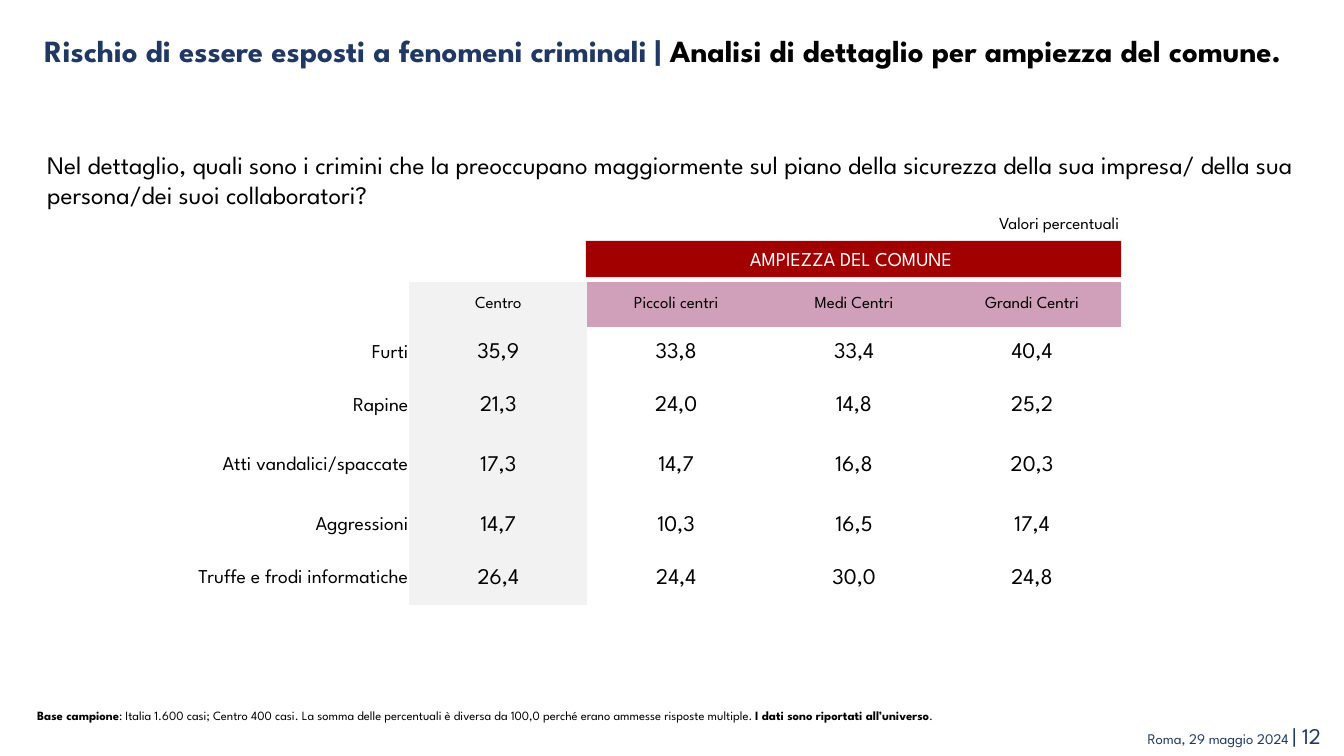
from pptx import Presentation
from pptx.dml.color import RGBColor
from pptx.enum.shapes import MSO_SHAPE
from pptx.enum.text import MSO_ANCHOR, PP_ALIGN
from pptx.util import Inches, Pt

FONT = "League Spartan"
COLORS = {
    "navy": "203864", "black": "000000", "white": "FFFFFF",
    "red": "A20000", "gray": "F2F2F2", "pink": "D0A0BA",
}
WIDTH, HEIGHT = Inches(13.33), Inches(7.5)
PLAIN_TABLE_STYLE = "{2D5ABB26-0587-4C30-8999-92F81FD0307C}"

HEADERS = ["", "Centro", "Piccoli centri", "Medi Centri", "Grandi Centri"]
CRIMES = [
    ["Furti", "35,9", "33,8", "33,4", "40,4"],
    ["Rapine", "21,3", "24,0", "14,8", "25,2"],
    ["Atti vandalici/spaccate", "17,3", "14,7", "16,8", "20,3"],
    ["Aggressioni", "14,7", "10,3", "16,5", "17,4"],
    ["Truffe e frodi informatiche", "26,4", "24,4", "30,0", "24,8"],
]


def across(percent):
    """Share of the slide's width."""
    return round(WIDTH * percent / 100)


def down(percent):
    """Share of the slide's height."""
    return round(HEIGHT * percent / 100)


def area(left, top, width, height):
    return across(left), down(top), across(width), down(height)


def color(name):
    return RGBColor.from_string(COLORS[name])


def write(frame, runs, align=PP_ALIGN.LEFT):
    """Fill a frame with one paragraph of (text, size, colour, bold) runs."""
    frame.word_wrap = True
    paragraph = frame.paragraphs[0]
    paragraph.alignment = align
    for text, size, tint, bold in runs:
        run = paragraph.add_run()
        run.text = text
        run.font.name = FONT
        run.font.size = Pt(size)
        run.font.bold = bold
        run.font.color.rgb = color(tint)
    return paragraph


def add_title(slide, place, runs):
    title = slide.shapes.title
    title.left, title.top, title.width, title.height = place
    frame = title.text_frame
    frame.vertical_anchor = MSO_ANCHOR.TOP
    frame.margin_left = frame.margin_right = Inches(0.07)
    frame.margin_top = frame.margin_bottom = Inches(0.04)
    write(frame, runs)


def add_text(slide, place, runs, align=PP_ALIGN.LEFT):
    return write(slide.shapes.add_textbox(*place).text_frame, runs, align)


def add_band(slide, place, text):
    band = slide.shapes.add_shape(MSO_SHAPE.RECTANGLE, *place)
    band.shadow.inherit = False
    band.fill.solid()
    band.fill.fore_color.rgb = color("red")
    band.line.fill.background()
    band.text_frame.vertical_anchor = MSO_ANCHOR.MIDDLE
    write(band.text_frame, [(text, 14, "white", False)], PP_ALIGN.CENTER)


def cell_fill(row, column):
    if column == 1:
        return "gray"
    if row == 0 and column > 1:
        return "pink"
    return "white"


def write_cell(cell, text, row, column):
    cell.fill.solid()
    cell.fill.fore_color.rgb = color(cell_fill(row, column))
    cell.vertical_anchor = MSO_ANCHOR.MIDDLE
    cell.margin_left = cell.margin_right = cell.margin_top = Inches(0.01)
    cell.margin_bottom = 0
    size = 12 if row == 0 else 14 if column == 0 else 16
    paragraph = cell.text_frame.paragraphs[0]
    paragraph.text = text
    paragraph.alignment = PP_ALIGN.RIGHT if column == 0 else PP_ALIGN.CENTER
    paragraph.font.size = Pt(size)
    for run in paragraph.runs:
        run.font.name = FONT
        run.font.size = Pt(size)
        run.font.color.rgb = color("black")


def add_crime_table(slide, left, top, widths, heights):
    place = area(left, top, sum(widths), sum(heights))
    frame = slide.shapes.add_table(len(heights), len(widths), *place)
    table = frame.table
    table.horz_banding = False
    table.first_row = False
    # Table style without borders
    table._tbl.tblPr.find("{*}tableStyleId").text = PLAIN_TABLE_STYLE
    for column, width in zip(table.columns, widths):
        column.width = across(width)
    for row, height in zip(table.rows, heights):
        row.height = down(height)
    for r, values in enumerate([HEADERS] + CRIMES):
        for c, text in enumerate(values):
            write_cell(table.cell(r, c), text, r, c)


def main():
    prs = Presentation()
    prs.slide_width, prs.slide_height = WIDTH, HEIGHT
    slide = prs.slides.add_slide(prs.slide_layouts[5])

    # Footer with date and page
    add_text(slide, area(47.04, 94.8, 51.99, 4.93), [
        ("Roma, 29 maggio 2024 ", 10.5, "navy", False),
        ("| 12", 16, "navy", False),
    ], PP_ALIGN.RIGHT)

    # Title and survey question
    add_title(slide, area(2.78, 3.6, 96.85, 10.93), [
        ("Rischio di essere esposti a fenomeni criminali |", 22, "navy", True),
        (" Analisi di dettaglio per ampiezza del comune.", 22, "black", True),
    ])
    add_text(slide, area(2.78, 19.07, 95.05, 9.47), [
        ("Nel dettaglio, quali sono i crimini che la preoccupano maggiormente "
         "sul piano della sicurezza della sua impresa/ della sua "
         "persona/dei suoi collaboratori?", 18, "black", False),
    ])

    # Results by town size
    add_band(slide, area(43.59, 31.87, 39.83, 4.8), "AMPIEZZA DEL COMUNE ")
    add_crime_table(slide, 3.98, 37.33, [26.48] + [13.24] * 4,
                    [5.87, 7, 7, 8.8, 7, 7])
    add_text(slide, area(67.89, 27.47, 16.13, 4),
             [("Valori percentuali", 12, "black", False)], PP_ALIGN.RIGHT)

    # Sample note
    note = add_text(slide, area(2.03, 92.8, 94.15, 3.33), [
        ("Base campione", 9, "black", True),
        (": Italia 1.600 casi; Centro 400 casi. La somma delle percentuali è "
         "diversa da 100,0 perché erano ammesse risposte multiple. ",
         9, "black", False),
        ("I dati sono riportati all’universo", 9, "black", True),
        (".", 9, "black", False),
    ], PP_ALIGN.JUSTIFY)
    note.line_spacing = 1.1

    prs.save("out.pptx")


if __name__ == "__main__":
    main()
